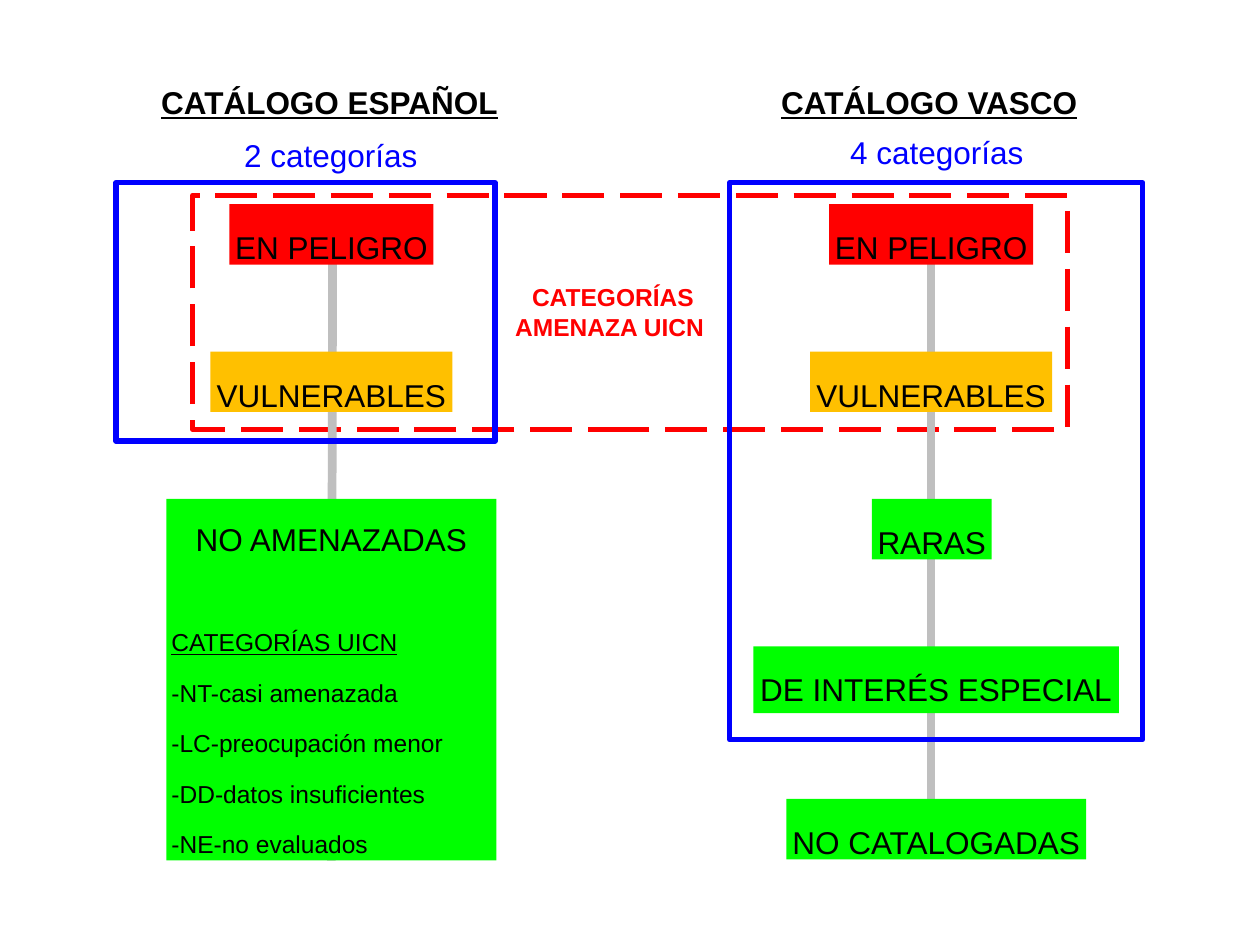
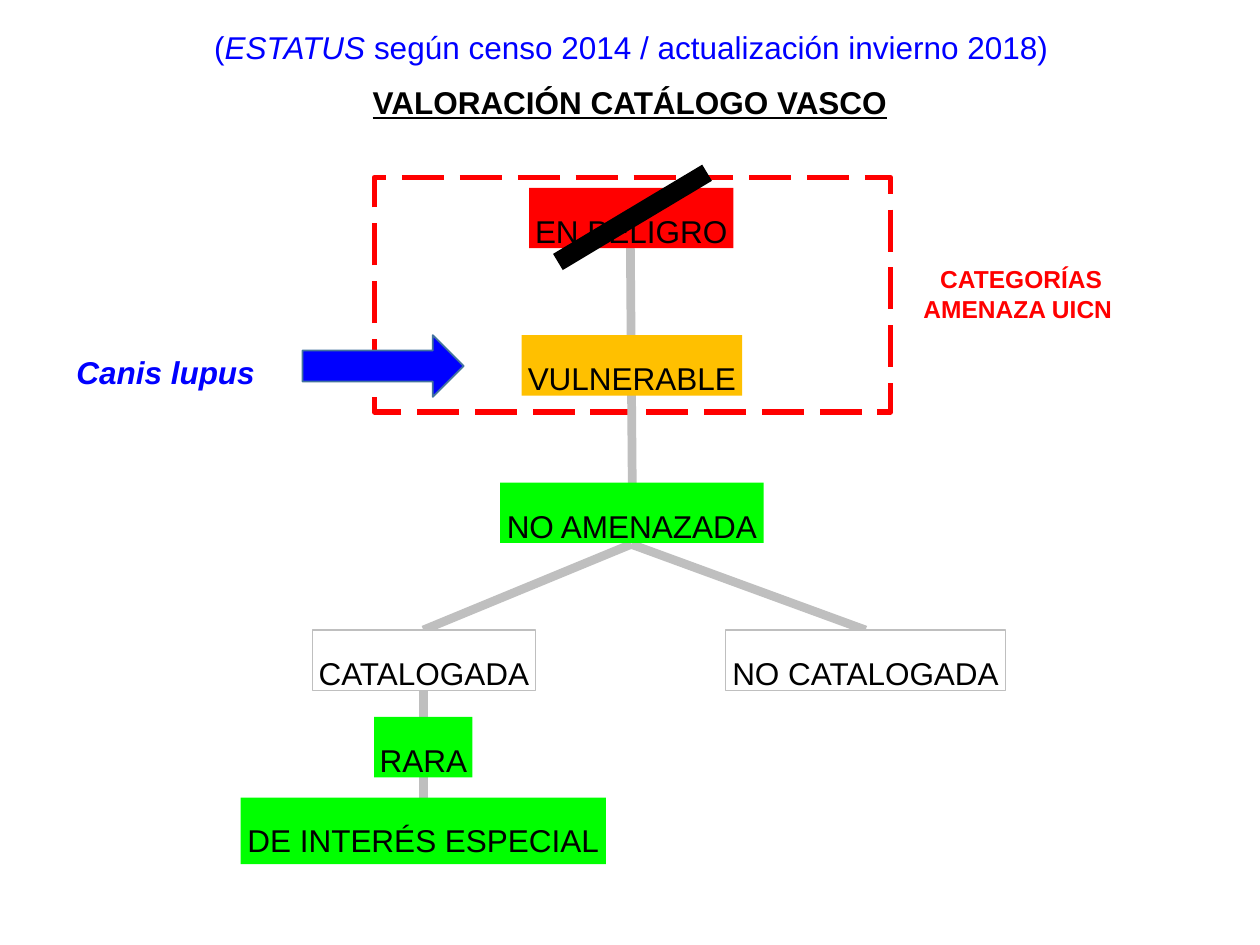
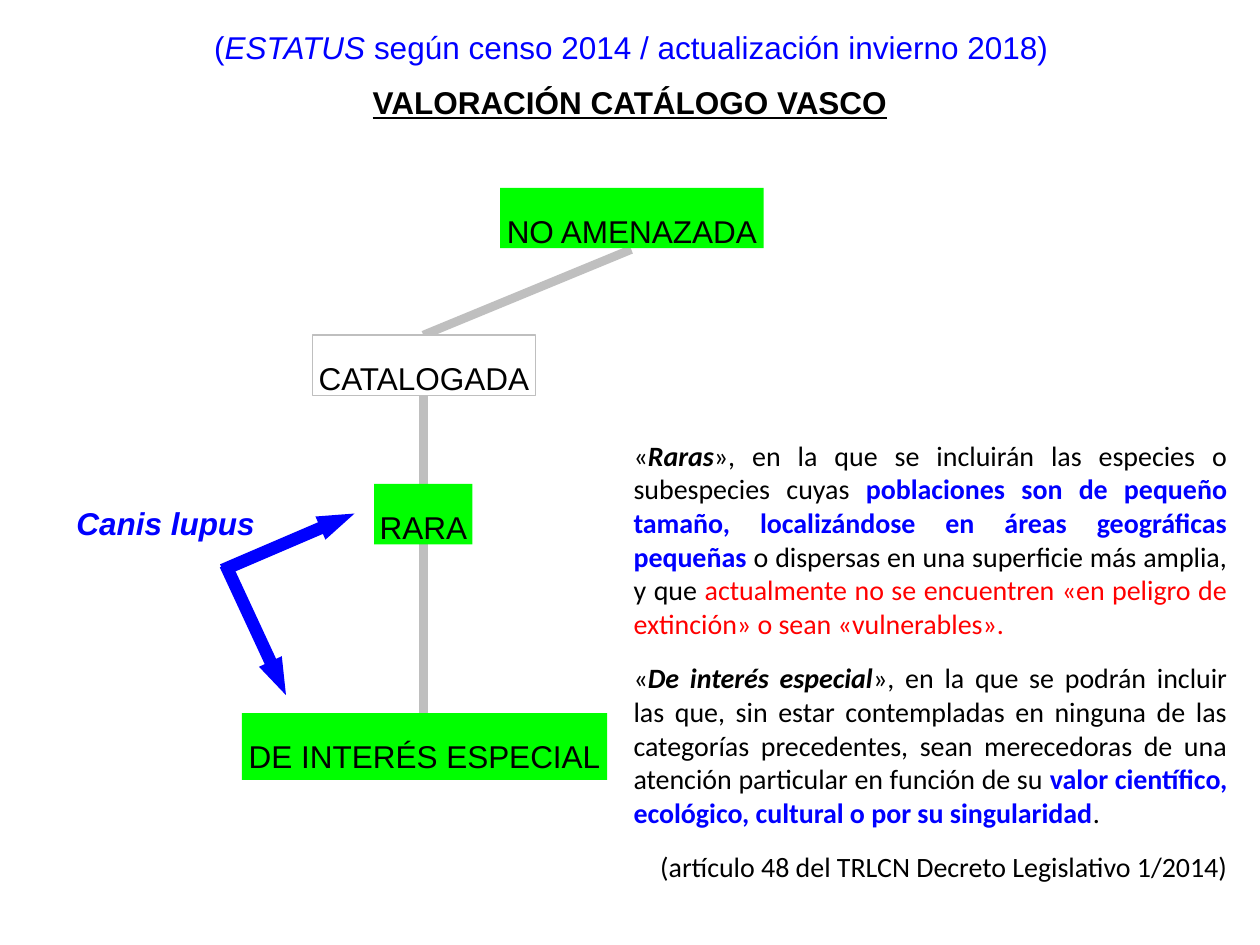
"""Build three slides comparing species threat catalogues."""
from dataclasses import dataclass

from lxml import etree
from pptx import Presentation
from pptx.dml.color import RGBColor
from pptx.enum.dml import MSO_LINE
from pptx.enum.shapes import MSO_CONNECTOR, MSO_SHAPE
from pptx.enum.text import MSO_ANCHOR, MSO_AUTO_SIZE, PP_ALIGN
from pptx.oxml.ns import qn
from pptx.shapes.autoshape import Shape
from pptx.slide import Slide
from pptx.text.text import TextFrame
from pptx.util import Emu, Pt

LEFT, CENTER, RIGHT, JUSTIFY = PP_ALIGN.LEFT, PP_ALIGN.CENTER, PP_ALIGN.RIGHT, PP_ALIGN.JUSTIFY
TOP, MIDDLE = MSO_ANCHOR.TOP, MSO_ANCHOR.MIDDLE
RECTANGLE, ARROW = MSO_SHAPE.RECTANGLE, MSO_SHAPE.RIGHT_ARROW
STRAIGHT = MSO_CONNECTOR.STRAIGHT
LONG_DASH = MSO_LINE.LONG_DASH
FIT_SHAPE, FIT_NONE = MSO_AUTO_SIZE.SHAPE_TO_FIT_TEXT, MSO_AUTO_SIZE.NONE

EMU_PER_PX = 9144
BLANK_LAYOUT = 6
ROW_PITCH = 117


@dataclass(frozen=True)
class Theme:
    """Colours, fonts and sizes shared by the slides."""
    ink: str = "000000"
    paper: str = "FFFFFF"
    blue: str = "0000FF"
    red: str = "FF0000"
    amber: str = "FFC000"
    green: str = "00FF00"
    grey: str = "BFBFBF"
    arrow_edge: str = "43739E"
    font: str = "Arial"
    prose_font: str = "Calibri"
    heading: int = 18
    prose: int = 16
    detail: int = 14
    frame_line: float = 3
    link_line: float = 5
    hairline: float = 0.75
    gap: int = 6
    loose: float = 1.5


THEME = Theme()


@dataclass(frozen=True)
class Run:
    """A stretch of text in one style."""
    text: str
    color: str = THEME.ink
    size: int = THEME.heading
    bold: bool = False
    italic: bool = False
    underline: bool = False
    font: str = THEME.font


@dataclass(frozen=True)
class Para:
    """A paragraph with its alignment and spacing."""
    runs: tuple[Run, ...]
    align: PP_ALIGN = CENTER
    leading: float | None = None
    before: int = THEME.gap
    after: int = THEME.gap


@dataclass(frozen=True)
class Area:
    """A rectangle in px."""
    left: int
    top: int
    width: int
    height: int


@dataclass(frozen=True)
class Category:
    """A catalogue category and the look of its box."""
    text: str
    width: int
    fill: str = THEME.green
    height: int = 48
    edge: str | None = None


@dataclass(frozen=True)
class Node:
    """A category placed by its centre line and top."""
    category: Category
    center: int
    top: int


@dataclass(frozen=True)
class Link:
    """A grey line between two points."""
    x1: int
    y1: int
    x2: int
    y2: int


ENDANGERED = Category("EN PELIGRO", 162, THEME.red)
VULNERABLE_ONE = Category("VULNERABLE", 175, THEME.amber)
VULNERABLE_ALL = Category("VULNERABLES", 192, THEME.amber)
RARE_ONE = Category("RARA", 78)
RARE_ALL = Category("RARAS", 95)
SPECIAL = Category("DE INTERÉS ESPECIAL", 290, height=53)
UNTHREATENED = Category("NO AMENAZADA", 209)
UNLISTED_ALL = Category("NO CATALOGADAS", 238)
LISTED = Category("CATALOGADA", 177, THEME.paper, edge=THEME.grey)
UNLISTED = Category("NO CATALOGADA", 222, THEME.paper, edge=THEME.grey)


def px(value: float) -> Emu:
    """Turn px into EMU."""
    return Emu(round(value * EMU_PER_PX))


def emu_box(area: Area) -> tuple[Emu, Emu, Emu, Emu]:
    """Give an area in EMU."""
    return px(area.left), px(area.top), px(area.width), px(area.height)


def write(frame: TextFrame, paras: tuple[Para, ...]) -> None:
    """Fill a text frame run by run."""
    for index, para in enumerate(paras):
        line = frame.add_paragraph() if index else frame.paragraphs[0]
        line.alignment = para.align
        line.space_before, line.space_after = Pt(para.before), Pt(para.after)
        if para.leading:
            line.line_spacing = para.leading
        for part in para.runs:
            run = line.add_run()
            run.text = part.text
            font = run.font
            font.name, font.size = part.font, Pt(part.size)
            font.bold, font.italic, font.underline = part.bold, part.italic, part.underline
            font.color.rgb = RGBColor.from_string(part.color)


def add_text(slide: Slide, area: Area, *paras: Para, wrap: bool = True) -> None:
    """Add a free text block."""
    frame = slide.shapes.add_textbox(*emu_box(area)).text_frame
    frame.word_wrap = wrap
    frame.auto_size = FIT_SHAPE
    write(frame, paras)


def add_block(slide: Slide, area: Area, fill: str | None = None, edge: str | None = None,
              weight: float = THEME.frame_line, kind: MSO_SHAPE = RECTANGLE,
              turn: float = 0) -> Shape:
    """Add a flat preset shape."""
    block = slide.shapes.add_shape(kind, *emu_box(area))
    block.shadow.inherit = False
    block.rotation = turn
    if fill:
        block.fill.solid()
        block.fill.fore_color.rgb = RGBColor.from_string(fill)
    else:
        block.fill.background()
    if edge:
        block.line.color.rgb = RGBColor.from_string(edge)
        block.line.width = Pt(weight)
    else:
        block.line.fill.background()
    return block


def label_block(block: Shape, *paras: Para, anchor: MSO_ANCHOR = TOP,
                fit: MSO_AUTO_SIZE = FIT_SHAPE) -> None:
    """Write text inside a block with narrow margins."""
    frame = block.text_frame
    frame.margin_left = frame.margin_right = frame.margin_top = frame.margin_bottom = px(4)
    frame.word_wrap = False
    frame.auto_size = fit
    frame.vertical_anchor = anchor
    write(frame, paras)


def add_nodes(slide: Slide, nodes: list[Node]) -> None:
    """Draw category boxes."""
    for node in nodes:
        category = node.category
        area = Area(node.center - category.width // 2, node.top, category.width, category.height)
        block = add_block(slide, area, category.fill, category.edge, THEME.hairline)
        label_block(block, Para((Run(category.text),), leading=THEME.loose))


def add_links(slide: Slide, links: list[Link]) -> None:
    """Draw grey lines."""
    for link in links:
        ends = (px(value) for value in (link.x1, link.y1, link.x2, link.y2))
        connector = slide.shapes.add_connector(STRAIGHT, *ends)
        connector.line.color.rgb = RGBColor.from_string(THEME.grey)
        connector.line.width = Pt(THEME.link_line)
        etree.SubElement(connector._element.spPr, qn("a:effectLst"))


def add_threat_zone(slide: Slide, area: Area) -> None:
    """Draw the dashed frame around the threat categories."""
    add_block(slide, area, edge=THEME.red).line.dash_style = LONG_DASH


def add_threat_label(slide: Slide, left: int, top: int) -> None:
    """Name the threat categories."""
    paras = (Para((Run(text, THEME.red, THEME.detail, bold=True),), before=0, after=0)
             for text in ("CATEGORÍAS", "AMENAZA UICN "))
    add_text(slide, Area(left, top, 199, 57), *paras)


def add_title(slide: Slide, text: str, area: Area) -> None:
    """Add an underlined title."""
    add_text(slide, area, Para((Run(text, bold=True, underline=True),), leading=THEME.loose))


def add_valuation_heading(slide: Slide) -> None:
    """Add the heading shared by the valuation slides."""
    add_title(slide, "VALORACIÓN CATÁLOGO VASCO", Area(256, 46, 488, 56))
    add_text(slide, Area(102, 17, 798, 40), Para((
        Run("(", THEME.blue),
        Run("ESTATUS", THEME.blue, italic=True),
        Run(" según censo 2014 / actualización invierno 2018)", THEME.blue),
    )))


def add_species(slide: Slide, top: int) -> None:
    """Name the species under assessment."""
    species = Run("Canis lupus", THEME.blue, bold=True, italic=True)
    add_text(slide, Area(50, top, 163, 51), Para((species,), leading=THEME.loose), wrap=False)


def build_comparison(slide: Slide) -> None:
    """Compare the Spanish and Basque catalogues."""
    spanish, basque, first_row = 263, 739, 162
    rows = [first_row + ROW_PITCH * step for step in range(4)]
    add_threat_zone(slide, Area(153, 155, 694, 186))
    add_links(slide, [Link(basque, 171, basque, 669), Link(spanish + 1, 184, spanish, 683)])
    add_nodes(slide, [Node(category, center, top)
                      for center in (spanish, basque)
                      for category, top in zip((ENDANGERED, VULNERABLE_ALL), rows)])
    add_nodes(slide, [Node(RARE_ALL, basque, rows[2]), Node(SPECIAL, 743, rows[3]),
                      Node(UNLISTED_ALL, 743, 634)])

    details = ("-NT-casi amenazada", "-LC-preocupación menor",
               "-DD-datos insuficientes", "-NE-no evaluados")
    label_block(
        add_block(slide, Area(132, rows[2], 262, 287), THEME.green),
        Para((Run("NO AMENAZADAS"),), leading=THEME.loose),
        Para((Run("CATEGORÍAS UICN", size=THEME.detail, underline=True),), LEFT, before=34),
        *(Para((Run(text, size=THEME.detail),), LEFT) for text in details),
        anchor=MIDDLE, fit=FIT_NONE)

    add_title(slide, "CATÁLOGO ESPAÑOL", Area(92, 46, 339, 51))
    add_title(slide, "CATÁLOGO VASCO", Area(568, 46, 339, 51))
    for text, area in (("2 categorías", Area(183, 88, 159, 51)),
                       ("4 categorías", Area(664, 86, 159, 56))):
        add_text(slide, area, Para((Run(text, THEME.blue),), leading=THEME.loose), wrap=False)
    for scope in (Area(92, 145, 301, 205), Area(579, 145, 328, 442)):
        add_block(slide, scope, edge=THEME.blue)
    add_threat_label(slide, 387, 219)


def build_threat_valuation(slide: Slide) -> None:
    """Place the species in the vulnerable category."""
    trunk, listed, unlisted, first_row = 501, 336, 687, 149
    rows = [first_row + ROW_PITCH * step for step in range(4)]
    add_threat_zone(slide, Area(297, 141, 410, 186))
    add_links(slide, [
        Link(listed, 649, listed, rows[3]),
        Link(trunk, 432, listed, rows[3]),
        Link(trunk, 432, unlisted, rows[3]),
        Link(trunk - 1, 159, trunk + 1, 407),
    ])
    add_nodes(slide, [
        Node(RARE_ONE, listed, 569),
        Node(VULNERABLE_ONE, trunk, rows[1]),
        Node(ENDANGERED, trunk, rows[0]),
        Node(SPECIAL, listed, 633),
        Node(UNTHREATENED, trunk, rows[2]),
        Node(UNLISTED, unlisted, rows[3]),
        Node(LISTED, listed, rows[3]),
    ])
    add_block(slide, Area(433, 165, 138, 15), THEME.ink, turn=329.1)
    add_block(slide, Area(240, 266, 128, 49), THEME.blue, THEME.arrow_edge, 1, ARROW)
    add_species(slide, 260)
    add_threat_label(slide, 711, 205)
    add_valuation_heading(slide)


def prose(text: str, color: str = THEME.ink, bold: bool = False, italic: bool = False) -> Run:
    """Make a run of legal prose."""
    return Run(text, color, THEME.prose, bold, italic, font=THEME.prose_font)


def build_listing_valuation(slide: Slide) -> None:
    """Show the listed options and their legal definitions."""
    trunk, listed, first_row = 501, 336, 149
    rows = [first_row + ROW_PITCH * step for step in range(3)]
    add_links(slide, [Link(trunk, 198, listed, rows[1]), Link(listed, 601, listed, rows[1])])
    add_nodes(slide, [
        Node(UNTHREATENED, trunk, rows[0]),
        Node(RARE_ONE, listed, rows[2] + 1),
        Node(SPECIAL, listed + 1, 566),
        Node(LISTED, listed, rows[1]),
    ])
    add_text(
        slide, Area(493, 343, 491, 367),
        Para((
            prose("«"),
            prose("Raras", bold=True, italic=True),
            prose("», en la que se incluirán las especies o subespecies cuyas "),
            prose("poblaciones son de pequeño tamaño, localizándose en áreas geográficas pequeñas ",
                  THEME.blue, bold=True),
            prose("o dispersas en una superficie más amplia, y que "),
            prose("actualmente no se encuentren «en peligro de extinción» o sean «vulnerables».",
                  THEME.red),
        ), JUSTIFY),
        Para((
            prose("«"),
            prose("De interés especial", bold=True, italic=True),
            prose("», en la que se podrán incluir las que, sin estar contempladas en ninguna "
                  "de las categorías precedentes, sean merecedoras de una atención particular "
                  "en función de su "),
            prose("valor científico, ecológico, cultural o por su singularidad",
                  THEME.blue, bold=True),
            prose("."),
        ), JUSTIFY),
        Para((prose("(artículo 48 del TRLCN Decreto Legislativo 1/2014)"),), RIGHT))
    add_valuation_heading(slide)
    add_species(slide, 380)
    for left, top, turn in ((172, 420, 336.8), (146, 490, 65.1)):
        pointer = add_block(slide, Area(left, top, 114, 20), THEME.blue, kind=ARROW, turn=turn)
        pointer.adjustments[0], pointer.adjustments[1] = 0.5, 1.47


def main() -> None:
    """Build and save the presentation."""
    deck = Presentation()
    deck.slide_width, deck.slide_height = px(1000), px(750)
    for build in (build_comparison, build_threat_valuation, build_listing_valuation):
        build(deck.slides.add_slide(deck.slide_layouts[BLANK_LAYOUT]))
    deck.save("out.pptx")


if __name__ == "__main__":
    main()
